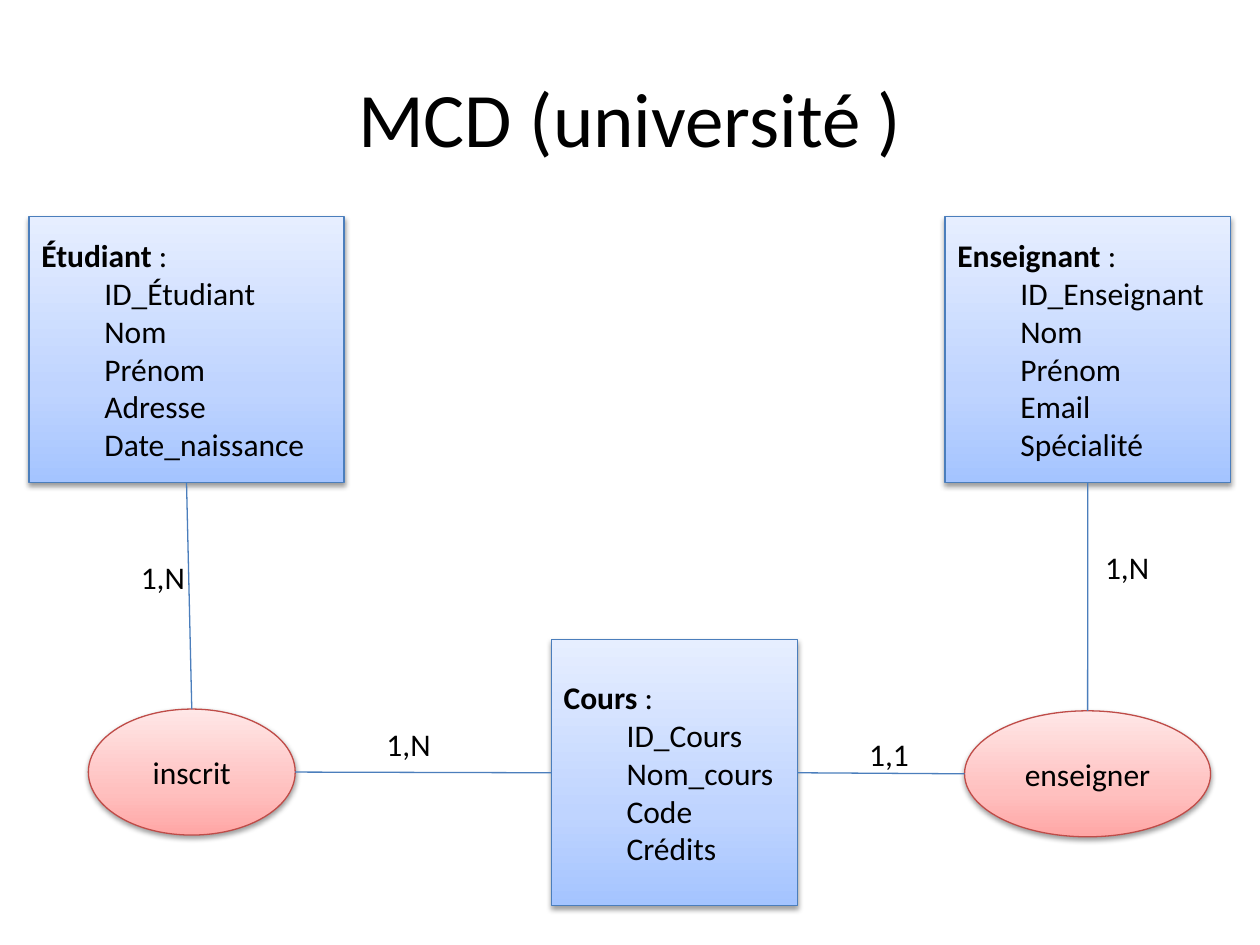
from lxml.etree import SubElement
from pptx import Presentation
from pptx.dml.color import RGBColor
from pptx.enum.shapes import MSO_CONNECTOR, MSO_SHAPE
from pptx.enum.text import MSO_ANCHOR, MSO_AUTO_SIZE, PP_ALIGN
from pptx.oxml.ns import qn
from pptx.util import Pt

FONT = "Calibri"
BLACK = "000000"
BLUE_LINE, RED_LINE = "4B7EBC", "BF4C48"
BLUE_STOPS = [(0, "A4C4FF"), (35, "BFD4FF"), (100, "E6EEFF")]
RED_STOPS = [(0, "FFA6A5"), (35, "FFC0BF"), (100, "FFE7E7")]

TITLE = "MCD (université )"

# name: (left, top, width, height), attributes
ENTITIES = {
    "Étudiant": ((16.6, 123.8, 180, 152),
                 ["ID_Étudiant", "Nom", "Prénom", "Adresse", "Date_naissance"]),
    "Cours": ((315, 365.6, 140.6, 152),
              ["ID_Cours", "Nom_cours", "Code", "Crédits"]),
    "Enseignant": ((540, 123.8, 163.2, 152),
                   ["ID_Enseignant", "Nom", "Prénom", "Email", "Spécialité"]),
}
ASSOCIATIONS = {
    "inscrit": (50.5, 405.2, 118.2, 72),
    "enseigner": (551.2, 406.2, 140.6, 72),
}
# start, side, end, side
LINKS = [
    ("Étudiant", "bottom", "inscrit", "top"),
    ("inscrit", "right", "Cours", "left"),
    ("Cours", "right", "enseigner", "left"),
    ("enseigner", "top", "Enseignant", "bottom"),
]
# text, left, top, width
CARDINALITIES = [
    ("1,N", 73.4, 315.4, 40.3),
    ("1,N", 213.8, 410.8, 40.3),
    ("1,1", 489.6, 416.2, 37.4),
    ("1,N", 624.4, 309.6, 40.3),
]
SIDES = {"top": (0.5, 0), "left": (0, 0.5), "bottom": (0.5, 1), "right": (1, 0.5)}


def color(value):
    return RGBColor.from_string(value)


def style_paragraph(paragraph, size=18, alignment=PP_ALIGN.LEFT):
    paragraph.alignment = alignment
    paragraph.font.size = Pt(size)
    paragraph.font.name = FONT
    paragraph.font.color.rgb = color(BLACK)


def add_color(parent, value):
    return SubElement(parent, qn("a:srgbClr"), val=value)


def add_node(slide, preset, box, stops, line_color):
    """Add a shape with a vertical gradient and a soft shadow below."""
    shape = slide.shapes.add_shape(preset, *map(Pt, box))
    shape.fill.gradient()
    shape.fill.gradient_angle = 90
    properties = shape._element.spPr
    stop_list = properties.find(qn("a:gradFill")).find(qn("a:gsLst"))
    for stop in list(stop_list):
        stop_list.remove(stop)
    for position, value in stops:
        add_color(SubElement(stop_list, qn("a:gs"), pos=str(position * 1000)), value)
    shape.line.color.rgb = color(line_color)
    shape.line.width = Pt(0.75)
    shape.shadow.inherit = False
    shadow = SubElement(properties.find(qn("a:effectLst")), qn("a:outerShdw"),
                        blurRad=str(Pt(3.1)), dist=str(Pt(1.6)),
                        dir="5400000", rotWithShape="0")
    SubElement(add_color(shadow, BLACK), qn("a:alpha"), val="38000")
    shape.text_frame.vertical_anchor = MSO_ANCHOR.MIDDLE
    return shape


def add_entity(slide, name, box, attributes):
    shape = add_node(slide, MSO_SHAPE.RECTANGLE, box, BLUE_STOPS, BLUE_LINE)
    heading = shape.text_frame.paragraphs[0]
    style_paragraph(heading)
    name_run = heading.add_run()
    name_run.text = name
    name_run.font.bold = True
    heading.add_run().text = " :"
    for attribute in attributes:
        paragraph = shape.text_frame.add_paragraph()
        paragraph.text = attribute
        paragraph.level = 1
        style_paragraph(paragraph)
        paragraph._p.get_or_add_pPr().set("marL", str(Pt(36)))


def add_association(slide, name, box):
    shape = add_node(slide, MSO_SHAPE.OVAL, box, RED_STOPS, RED_LINE)
    shape.text_frame.text = name
    style_paragraph(shape.text_frame.paragraphs[0], alignment=PP_ALIGN.CENTER)


def side_point(box, side):
    left, top, width, height = box
    across, down = SIDES[side]
    return Pt(left + across * width), Pt(top + down * height)


def add_link(slide, start, end):
    connector = slide.shapes.add_connector(MSO_CONNECTOR.STRAIGHT, *start, *end)
    connector.line.color.rgb = color(BLUE_LINE)
    connector.line.width = Pt(0.75)
    SubElement(connector._element.spPr, qn("a:effectLst"))


def add_cardinality(slide, text, left, top, width):
    label = slide.shapes.add_textbox(Pt(left), Pt(top), Pt(width), Pt(29))
    label.text_frame.word_wrap = False
    label.text_frame.auto_size = MSO_AUTO_SIZE.SHAPE_TO_FIT_TEXT
    label.text_frame.text = text
    style_paragraph(label.text_frame.paragraphs[0])


def main():
    presentation = Presentation()
    presentation.slide_width, presentation.slide_height = Pt(720), Pt(540)
    slide = presentation.slides.add_slide(presentation.slide_layouts[5])

    title = slide.shapes.title
    title.left, title.top, title.width, title.height = map(Pt, (36, 21.6, 648, 90))
    title.text_frame.text = TITLE
    title.text_frame.vertical_anchor = MSO_ANCHOR.MIDDLE
    style_paragraph(title.text_frame.paragraphs[0], 44, PP_ALIGN.CENTER)

    boxes = dict(ASSOCIATIONS)
    for name, (box, attributes) in ENTITIES.items():
        boxes[name] = box
        add_entity(slide, name, box, attributes)
    for name, box in ASSOCIATIONS.items():
        add_association(slide, name, box)
    for start, start_side, end, end_side in LINKS:
        add_link(slide, side_point(boxes[start], start_side),
                 side_point(boxes[end], end_side))
    for cardinality in CARDINALITIES:
        add_cardinality(slide, *cardinality)

    presentation.save("out.pptx")


if __name__ == "__main__":
    main()
